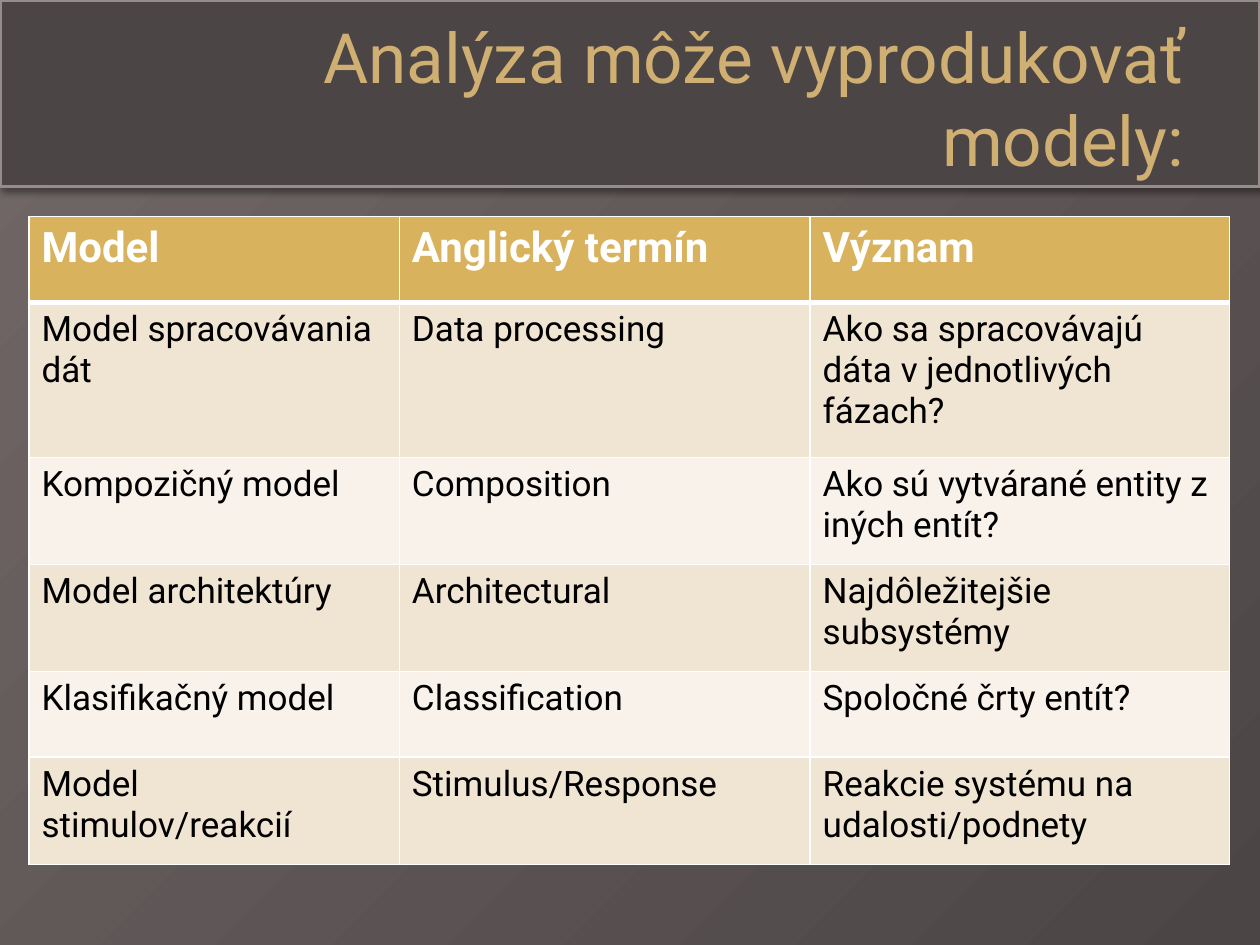
import pptx
import pptx.dml.color
import pptx.enum.shapes
import pptx.enum.text
import pptx.oxml
import pptx.oxml.ns
import pptx.util

Inches, Pt = pptx.util.Inches, pptx.util.Pt
FONT = "Roboto"
COLORS = {
    "dark": "4C4545", "light": "726868", "banner_line": "968C8C",
    "title": "D0AF72", "header": "D8B25C", "odd": "F0E4D2", "even": "F8F2EA",
    "white": "FFFFFF", "black": "000000",
}
ROWS = [
    ("Model", "Anglický termín", "Význam"),
    ("Model spracovávania dát", "Data processing",
     "Ako sa spracovávajú dáta v jednotlivých fázach?"),
    ("Kompozičný model", "Composition", "Ako sú vytvárané entity z iných entít?"),
    ("Model architektúry", "Architectural", "Najdôležitejšie subsystémy"),
    ("Klasifikačný model", "Classification", "Spoločné črty entít?"),
    ("Model stimulov/reakcií", "Stimulus/Response",
     "Reakcie systému na udalosti/podnety"),
]
COL_WIDTHS = [2.94, 3.26, 3.33]
ROW_HEIGHTS = [0.68, 1.23, 0.85, 0.85, 0.68, 0.85]


def rgb(name):
    return pptx.dml.color.RGBColor.from_string(COLORS[name])


def set_borders(cell, widths):
    """Draw white cell borders; widths maps a side (L, R, T, B) to points."""
    tcPr = cell._tc.get_or_add_tcPr()
    for i, (side, width) in enumerate(widths.items()):
        tcPr.insert(i, pptx.oxml.parse_xml(
            f'<a:ln{side} {pptx.oxml.ns.nsdecls("a")} w="{Pt(width)}"><a:solidFill>'
            f'<a:srgbClr val="{COLORS["white"]}"/></a:solidFill></a:ln{side}>'))


prs = pptx.Presentation()
prs.slide_width, prs.slide_height = Inches(10), Inches(7.5)
s = prs.slides.add_slide(prs.slide_layouts[6])

# Background, lighter at the top left
fill = s.background.fill
fill.gradient()
fill.gradient_angle = 315
for stop, name in zip(fill.gradient_stops, ("light", "dark")):
    stop.color.rgb = rgb(name)

# Title banner
sp = s.shapes.add_shape(pptx.enum.shapes.MSO_SHAPE.RECTANGLE,
                        0, 0, Inches(10), Inches(1.48))
sp.fill.solid()
sp.fill.fore_color.rgb = rgb("dark")
sp.line.color.rgb = rgb("banner_line")
sp.line.width = Pt(2)
sp.shadow.inherit = False
effects = sp._element.spPr.find(pptx.oxml.ns.qn("a:effectLst"))
effects.append(pptx.oxml.parse_xml(
    f'<a:outerShdw {pptx.oxml.ns.nsdecls("a")} blurRad="{Pt(4)}" dist="{Pt(3)}" '
    f'dir="2700000"><a:srgbClr val="{COLORS["black"]}"><a:alpha val="40000"/>'
    '</a:srgbClr></a:outerShdw>'))

# Title
tf = s.shapes.add_textbox(Inches(0.5), Inches(0.3), Inches(9), Inches(0.95)).text_frame
tf.word_wrap = True
tf.vertical_anchor = pptx.enum.text.MSO_ANCHOR.MIDDLE
p = tf.paragraphs[0]
p.text = "Analýza môže vyprodukovať modely:"
p.alignment = pptx.enum.text.PP_ALIGN.RIGHT
p.font.name, p.font.size = FONT, Pt(39.6)
p.font.color.rgb = rgb("title")

# Table of models
table = s.shapes.add_table(len(ROWS), len(COL_WIDTHS), Inches(0.23), Inches(1.72),
                           Inches(sum(COL_WIDTHS)), Inches(sum(ROW_HEIGHTS))).table
for column, width in zip(table.columns, COL_WIDTHS):
    column.width = Inches(width)
for i, (texts, height) in enumerate(zip(ROWS, ROW_HEIGHTS)):
    table.rows[i].height = Inches(height)
    header = i == 0
    band = "header" if header else "odd" if i % 2 else "even"
    for j, text in enumerate(texts):
        cell = table.cell(i, j)
        cell.fill.solid()
        cell.fill.fore_color.rgb = rgb(band)
        set_borders(cell, {"L": 1, "R": 1, "T": 3 if i == 1 else 1,
                           "B": 3 if header else 1})
        p = cell.text_frame.paragraphs[0]
        p.text = text
        p.font.name, p.font.size = FONT, Pt(24 if header else 20)
        p.font.bold = header
        p.font.color.rgb = rgb("white" if header else "black")

prs.save("out.pptx")
